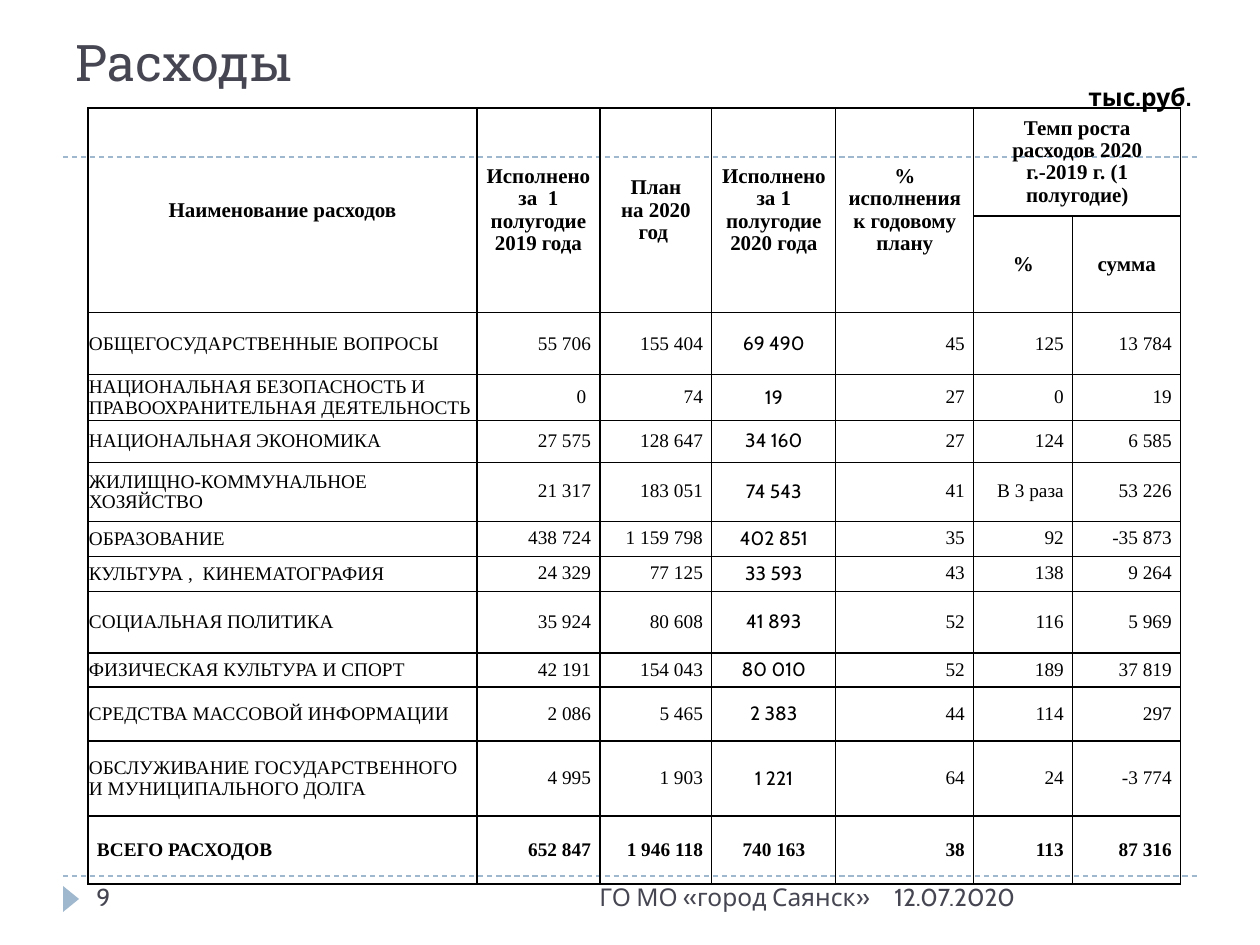
import pptx
import pptx.dml.color
import pptx.enum.dml
import pptx.enum.shapes
import pptx.enum.text
import pptx.oxml
import pptx.oxml.ns
import pptx.util

BLACK = pptx.dml.color.RGBColor(0, 0, 0)
SLATE = pptx.dml.color.RGBColor(0x46, 0x46, 0x53)
MIST = pptx.dml.color.RGBColor(0x9F, 0xB8, 0xCD)
BODY, SERIF, HEAD = "Cabin", "Times New Roman", "Roboto Slab"
LEFT = pptx.enum.text.PP_ALIGN.LEFT
CENTER = pptx.enum.text.PP_ALIGN.CENTER
RIGHT = pptx.enum.text.PP_ALIGN.RIGHT
MIDDLE = pptx.enum.text.MSO_ANCHOR.MIDDLE

COLUMNS = [389, 123, 112, 124, 138, 99, 108]
ROWS = [108, 94, 62, 45, 42, 59, 35, 35, 62, 34, 54, 75, 68]
EXECUTED_2020 = 3
HEADERS = [
    "Наименование расходов",
    "Исполнено за  1 полугодие 2019 года",
    "План\nна 2020 год ",
    "Исполнено за 1 полугодие 2020 года",
    "% исполнения к годовому плану",
    "Темп роста расходов 2020 г.-2019 г. (1 полугодие)",
]
EXPENSES = [
    ("ОБЩЕГОСУДАРСТВЕННЫЕ ВОПРОСЫ", "55 706", "155 404", "69 490", "45", "125", "13 784"),
    ("НАЦИОНАЛЬНАЯ БЕЗОПАСНОСТЬ И ПРАВООХРАНИТЕЛЬНАЯ ДЕЯТЕЛЬНОСТЬ",
     "0 ", "74", "19", "27", "0", "19"),
    ("НАЦИОНАЛЬНАЯ ЭКОНОМИКА", "27 575", "128 647", "34 160", "27", "124", "6 585"),
    ("ЖИЛИЩНО-КОММУНАЛЬНОЕ ХОЗЯЙСТВО",
     "21 317", "183 051", "74 543", "41", "В 3 раза", "53 226"),
    ("ОБРАЗОВАНИЕ", "438 724", "1 159 798", "402 851", "35", "92", "-35 873"),
    ("КУЛЬТУРА ,  КИНЕМАТОГРАФИЯ", "24 329", "77 125", "33 593", "43", "138", "9 264"),
    ("СОЦИАЛЬНАЯ ПОЛИТИКА", "35 924", "80 608", "41 893", "52", "116", "5 969"),
    ("ФИЗИЧЕСКАЯ КУЛЬТУРА И СПОРТ", "42 191", "154 043", "80 010", "52", "189", "37 819"),
    ("СРЕДСТВА МАССОВОЙ ИНФОРМАЦИИ", "2 086", "5 465", "2 383", "44", "114", "297"),
    ("ОБСЛУЖИВАНИЕ ГОСУДАРСТВЕННОГО И МУНИЦИПАЛЬНОГО ДОЛГА",
     "4 995", "1 903", "1 221", "64", "24", "-3 774"),
    ("ВСЕГО РАСХОДОВ", "652 847", "1 946 118", "740 163", "38", "113", "87 316"),
]


def px(length):
    return pptx.util.Emu(round(length * 914400 / 126))


def write(frame, text, size=14, font=BODY, color=SLATE, bold=False, align=LEFT, spacing=None):
    for index, line in enumerate(text.split("\n")):
        para = frame.paragraphs[0] if index == 0 else frame.add_paragraph()
        para.alignment = align
        para.line_spacing = spacing
        span = para.add_run()
        span.text = line
        span.font.size = pptx.util.Pt(size)
        span.font.name = font
        span.font.bold = bold
        span.font.color.rgb = color


class Painter:
    def __init__(self, page, accent=MIST, border=BLACK):
        self.page = page
        self.accent = accent
        self.border = border

    def title(self, text, left, top, width, height):
        box = self.page.shapes.title
        box.left, box.top, box.width, box.height = map(px, (left, top, width, height))
        box.text_frame.word_wrap = True
        box.text_frame.vertical_anchor = pptx.enum.text.MSO_ANCHOR.BOTTOM
        write(box.text_frame, text, size=28.8, font=HEAD)

    def text(self, text, left, top, width, height, wrap=True, **style):
        box = self.page.shapes.add_textbox(*map(px, (left, top, width, height)))
        box.text_frame.word_wrap = wrap
        write(box.text_frame, text, **style)

    def rule(self, left, right, top):
        line = self.page.shapes.add_connector(
            pptx.enum.shapes.MSO_CONNECTOR.STRAIGHT, *map(px, (left, top, right, top)))
        line.line.color.rgb = self.accent
        line.line.width = pptx.util.Pt(0.75)
        line.line.dash_style = pptx.enum.dml.MSO_LINE.DASH
        line._element.spPr.append(pptx.oxml.parse_xml(
            f'<a:effectLst {pptx.oxml.ns.nsdecls("a")}/>'))

    def marker(self, left, top, width, height):
        shape = self.page.shapes.add_shape(
            pptx.enum.shapes.MSO_SHAPE.ISOSCELES_TRIANGLE,
            *map(px, (left, top, width, height)))
        shape.rotation = 90
        shape.shadow.inherit = False
        shape.fill.solid()
        shape.fill.fore_color.rgb = self.accent
        shape.line.fill.background()

    def table(self, left, top, columns, rows):
        table = self.page.shapes.add_table(
            len(rows), len(columns),
            *map(px, (left, top, sum(columns), sum(rows)))).table
        table.first_row = table.horz_banding = False
        for column, width in zip(table.columns, columns):
            column.width = px(width)
        for row, height in zip(table.rows, rows):
            row.height = px(height)
        for cell in table.iter_cells():
            cell.fill.background()
            cell.margin_left = cell.margin_right = px(9)
            cell.margin_top = cell.margin_bottom = 0
            cell.vertical_anchor = MIDDLE
            self.outline(cell)
        return table

    def outline(self, cell):
        properties = cell._tc.get_or_add_tcPr()
        for index, side in enumerate("LRTB"):
            properties.insert(index, pptx.oxml.parse_xml(
                f'<a:ln{side} {pptx.oxml.ns.nsdecls("a")} w="9525"><a:solidFill>'
                f'<a:srgbClr val="{self.border}"/></a:solidFill></a:ln{side}>'))

    def cell(self, cell, text, side=9, top=0, **style):
        cell.margin_left = cell.margin_right = px(side)
        cell.margin_top = px(top)
        write(cell.text_frame, text, color=BLACK, spacing=0.96, **style)


def fill_expenses(painter, table):
    heading = dict(size=12, font=SERIF, bold=True, align=CENTER)
    for column, text in enumerate(HEADERS):
        corner = table.cell(0, column)
        corner.merge(table.cell(0, 6) if column == 5 else table.cell(1, column))
        painter.cell(corner, text, **heading)
    for column, text in ((5, "%"), (6, "сумма")):
        painter.cell(table.cell(1, column), text, **heading)

    for row, values in enumerate(EXPENSES, 2):
        total = row == len(ROWS) - 1
        for column, text in enumerate(values):
            style = dict(size=11, font=SERIF, bold=total, align=RIGHT)
            if column == 0:
                style["align"] = LEFT
                if not total:
                    style.update(side=1, top=1)
            elif column == EXECUTED_2020:
                style.update(align=CENTER, font=SERIF if total else BODY)
            painter.cell(table.cell(row, column), text, **style)


def main():
    deck = pptx.Presentation()
    deck.slide_width, deck.slide_height = px(1260), px(945)
    painter = Painter(deck.slides.add_slide(deck.slide_layouts[5]))
    for top in (876, 157):
        painter.rule(63, 1197, top)
    painter.marker(58, 891, 26, 16)
    painter.title("Расходы", 63, 21, 1134, 77)
    painter.text("12.07.2020", 882, 876, 315, 50)
    painter.text("ГО МО «город Саянск»", 399, 876, 483, 50, align=RIGHT)
    painter.text("9", 84, 876, 273, 50)
    fill_expenses(painter, painter.table(88, 108, COLUMNS, ROWS))
    painter.text("тыс.руб.", 1076, 76, 129, 43, wrap=False, color=BLACK, bold=True)
    deck.save("out.pptx")


if __name__ == "__main__":
    main()
